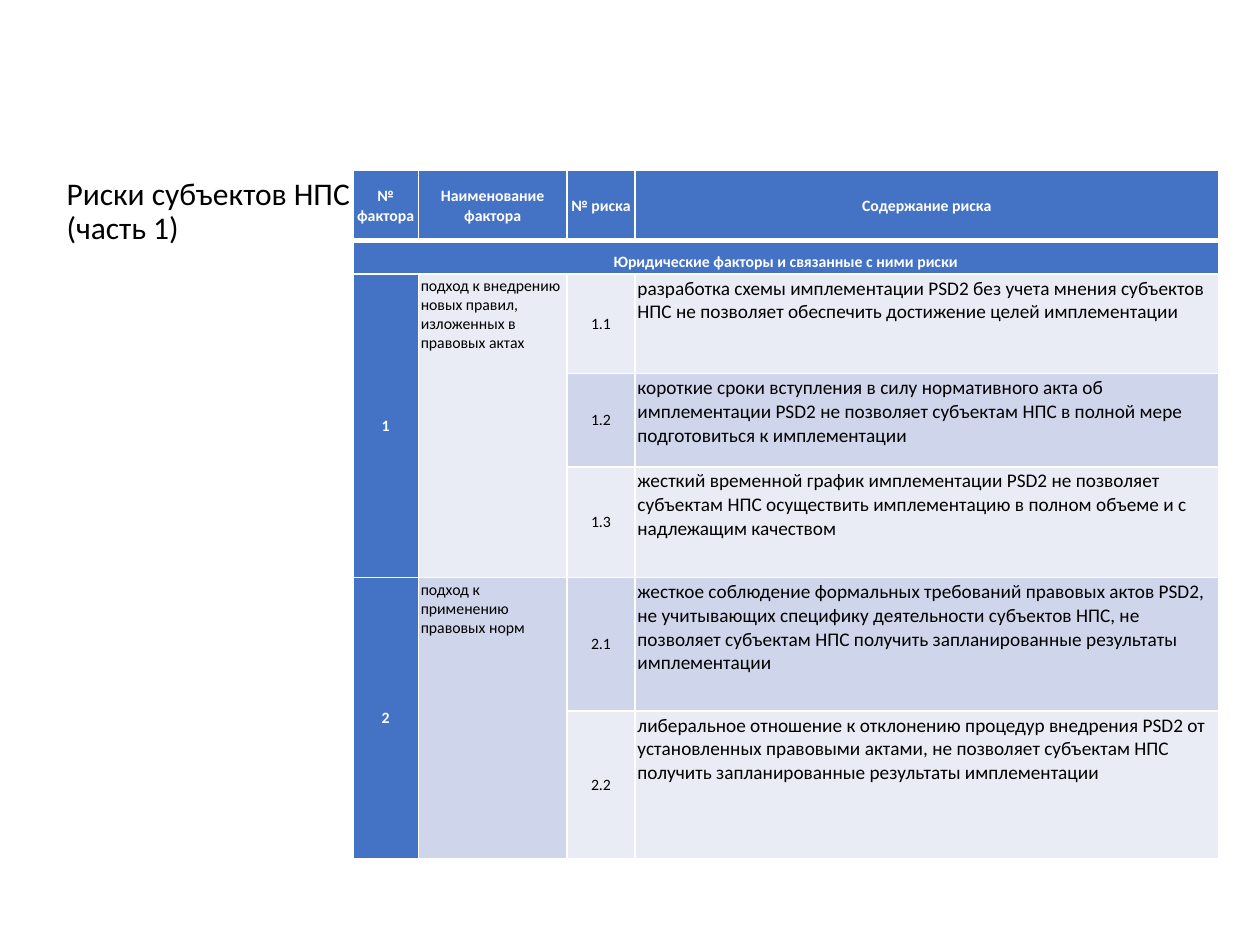
from lxml import etree
from pptx import Presentation
from pptx.dml.color import RGBColor
from pptx.enum.text import MSO_ANCHOR, PP_ALIGN
from pptx.oxml.ns import qn
from pptx.util import Inches, Pt

CENTER, LEFT = PP_ALIGN.CENTER, PP_ALIGN.LEFT
MIDDLE, TOP = MSO_ANCHOR.MIDDLE, MSO_ANCHOR.TOP

FONT = "Calibri"
BLUE, WHITE, BLACK = "4472C4", "FFFFFF", "000000"
BANDS = ("E9EBF5", "CFD5EA")
CELL_MARGIN = 0.02

COLUMN_WIDTHS = (0.52, 1.18, 0.54, 4.63)
ROW_HEIGHTS = (0.56, 0.26, 0.79, 0.74, 0.88, 1.06, 1.17)
HEADERS = ("№ фактора", "Наименование фактора", "№ риска", "Содержание риска")
SECTION = "Юридические факторы и связанные с ними риски"
FACTORS = (
    ("подход к внедрению новых правил, изложенных в правовых актах", (
        "разработка схемы имплементации PSD2 без учета мнения субъектов НПС "
        "не позволяет обеспечить достижение целей имплементации",
        "короткие сроки вступления в силу нормативного акта об имплементации PSD2 "
        "не позволяет субъектам НПС в полной мере подготовиться к имплементации",
        "жесткий временной график имплементации PSD2 не позволяет субъектам НПС "
        "осуществить имплементацию в полном объеме и с надлежащим качеством",
    )),
    ("подход к применению правовых норм", (
        "жесткое соблюдение формальных требований правовых актов PSD2, "
        "не учитывающих специфику деятельности субъектов НПС, не позволяет "
        "субъектам НПС получить запланированные результаты имплементации",
        "либеральное отношение к отклонению процедур внедрения PSD2 от "
        "установленных правовыми актами, не позволяет субъектам НПС получить "
        "запланированные результаты имплементации",
    )),
)


def color(value):
    return RGBColor.from_string(value)


def write_text(text_frame, text, size=9, text_color=BLACK, bold=False,
               align=LEFT, spacing=1.0):
    text_frame.word_wrap = True
    paragraph = text_frame.paragraphs[0]
    paragraph.text = text
    paragraph.alignment = align
    paragraph.line_spacing = spacing
    for run in paragraph.runs:
        run.font.name = FONT
        run.font.size = Pt(size)
        run.font.bold = bold
        run.font.color.rgb = color(text_color)


def set_borders(cell, bottom=1):
    """Draw white lines, given in points, on all four sides of a cell."""
    properties = cell._tc.get_or_add_tcPr()
    sides = (("a:lnL", 1), ("a:lnR", 1), ("a:lnT", 1), ("a:lnB", bottom))
    for position, (tag, width) in enumerate(sides):
        line = etree.Element(qn(tag), w=str(Pt(width)))
        fill = etree.SubElement(line, qn("a:solidFill"))
        etree.SubElement(fill, qn("a:srgbClr"), val=WHITE)
        properties.insert(position, line)


def fill_cell(cell, text, fill, anchor=MIDDLE, **text_format):
    cell.fill.solid()
    cell.fill.fore_color.rgb = color(fill)
    cell.vertical_anchor = anchor
    cell.margin_left = cell.margin_right = Inches(CELL_MARGIN)
    cell.margin_top = cell.margin_bottom = Inches(CELL_MARGIN)
    write_text(cell.text_frame, text, **text_format)


def fill_blue_cell(cell, text, spacing=1.0):
    fill_cell(cell, text, BLUE, text_color=WHITE, bold=True, align=CENTER,
              spacing=spacing)


def fill_factor(table, first_row, number, name, risks):
    """Fill the rows of one factor and return the row after them."""
    last_row = first_row + len(risks) - 1
    for column in (0, 1):
        table.cell(first_row, column).merge(table.cell(last_row, column))
    fill_blue_cell(table.cell(first_row, 0), str(number))
    fill_cell(table.cell(first_row, 1), name, BANDS[first_row % 2], anchor=TOP)
    for index, risk in enumerate(risks):
        row = first_row + index
        band = BANDS[row % 2]
        fill_cell(table.cell(row, 2), f"{number}.{index + 1}", band, align=CENTER)
        fill_cell(table.cell(row, 3), risk, band, anchor=TOP, size=11)
    return last_row + 1


def add_title(slide, left, top, width, height):
    box = slide.shapes.add_textbox(Inches(left), Inches(top),
                                   Inches(width), Inches(height))
    box.text_frame.vertical_anchor = MIDDLE
    write_text(box.text_frame, "Риски субъектов НПС\v(часть 1)", size=18,
               spacing=0.9)


def add_risk_table(slide, left, top):
    table = slide.shapes.add_table(
        len(ROW_HEIGHTS), len(COLUMN_WIDTHS), Inches(left), Inches(top),
        Inches(sum(COLUMN_WIDTHS)), Inches(sum(ROW_HEIGHTS))).table
    for column, width in zip(table.columns, COLUMN_WIDTHS):
        column.width = Inches(width)
    for index, (row, height) in enumerate(zip(table.rows, ROW_HEIGHTS)):
        row.height = Inches(height)
        for cell in row.cells:
            set_borders(cell, bottom=3 if index == 0 else 1)

    for column, header in enumerate(HEADERS):
        fill_blue_cell(table.cell(0, column), header, spacing=1.07)
    table.cell(1, 0).merge(table.cell(1, len(HEADERS) - 1))
    fill_blue_cell(table.cell(1, 0), SECTION, spacing=1.5)
    row = 2
    for number, (name, risks) in enumerate(FACTORS, start=1):
        row = fill_factor(table, row, number, name, risks)


def main():
    presentation = Presentation()
    presentation.slide_width = Inches(10)
    presentation.slide_height = Inches(7.5)
    slide = presentation.slides.add_slide(presentation.slide_layouts[6])
    add_title(slide, 0.43, 1.24, 7.8, 0.89)
    add_risk_table(slide, 2.8, 1.35)
    presentation.save("out.pptx")


if __name__ == "__main__":
    main()
